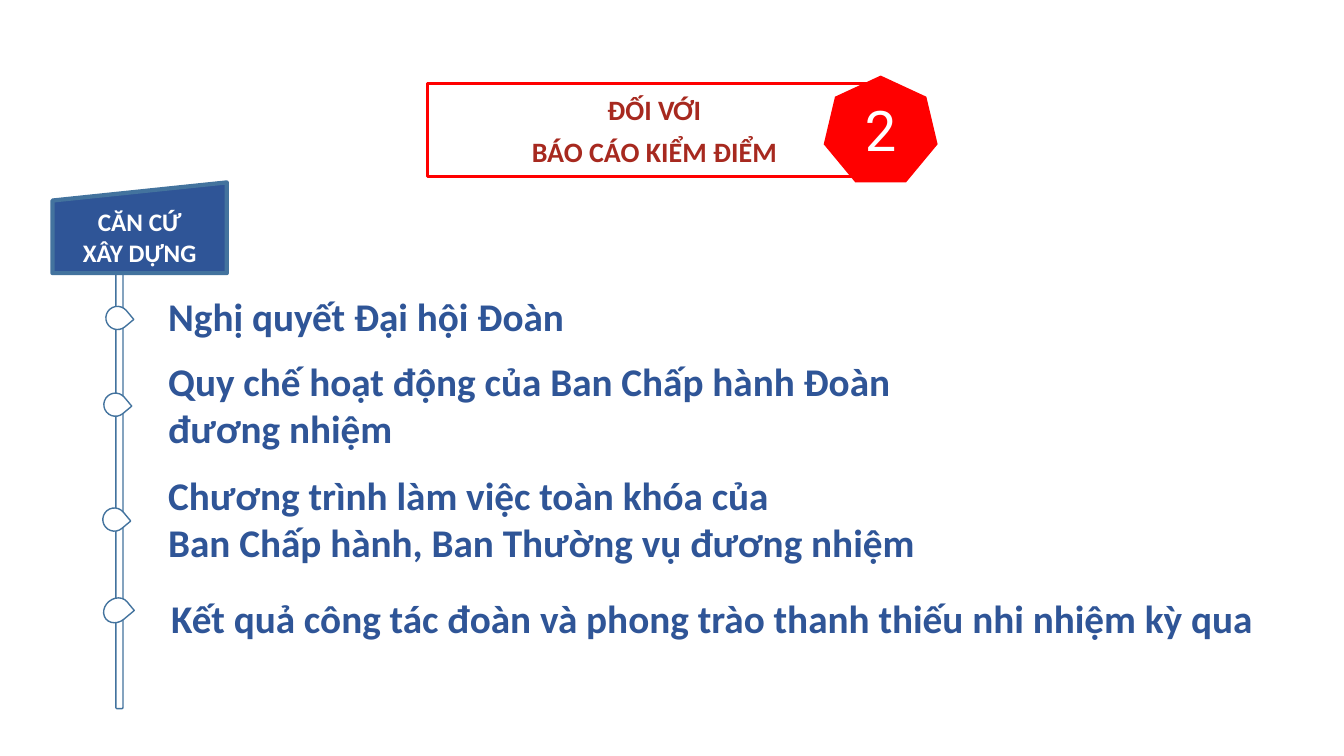
from pptx import Presentation
from pptx.dml.color import RGBColor
from pptx.enum.shapes import MSO_SHAPE as SHAPE
from pptx.enum.text import MSO_ANCHOR as ANCHOR, MSO_AUTO_SIZE as AUTO, PP_ALIGN as ALIGN
from pptx.util import Inches, Pt

BLUE, STEEL, RED, BRICK, WHITE = "2F5597", "43739E", "FF0000", "A7291F", "FFFFFF"


def rgb(color):
    return RGBColor.from_string(color)


def paint(sp, fill, line=None, width=1):
    sp.fill.solid()
    sp.fill.fore_color.rgb = rgb(fill)
    if line:
        sp.line.color.rgb = rgb(line)
        sp.line.width = Pt(width)
    else:
        sp.line.fill.background()


def add_shape(s, kind, box, fill, line=None, width=1, rotation=0):
    sp = s.shapes.add_shape(kind, *map(Inches, box))
    sp.shadow.inherit = False
    sp.rotation = rotation
    paint(sp, fill, line, width)
    return sp


def write(sp, text, size, color, font="Calibri", bold=True, align=ALIGN.CENTER,
          anchor=ANCHOR.MIDDLE, gap=0, auto_size=AUTO.NONE):
    """Write one paragraph per line; gap is the space between them."""
    tf = sp.text_frame
    tf.word_wrap = True
    tf.auto_size = auto_size
    tf.vertical_anchor = anchor
    for i, line in enumerate(text.split("\n")):
        p = tf.paragraphs[0] if i == 0 else tf.add_paragraph()
        p.alignment = align
        p.space_before = Pt(gap if i else 0)
        r = p.add_run()
        r.text = line
        r.font.name = font
        r.font.size = Pt(size)
        r.font.bold = bold
        r.font.color.rgb = rgb(color)


def title_banner(s, left, top, width, height):
    # Framed title
    title = s.shapes.title
    title.left, title.top, title.width, title.height = map(
        Inches, (left, top, width, height))
    paint(title, WHITE, RED, 2.25)
    write(title, "ĐỐI VỚI\nBÁO CÁO KIỂM ĐIỂM", 20, BRICK, gap=6)

    # Number badge over the right edge
    badge = add_shape(s, SHAPE.HEPTAGON,
                      (left + width - 0.57, top - 0.08, 1.13, 1.06), RED)
    write(badge, "2", 40, WHITE, font="Roboto", bold=False)


def signpost(s, left, top, width, height):
    # Post, then the sign standing on it
    sign_height = 0.9
    add_shape(s, SHAPE.ROUNDED_RECTANGLE,
              (left + 0.63, top + sign_height, 0.07, height - sign_height), WHITE, STEEL)
    sign = add_shape(s, SHAPE.FLOWCHART_MANUAL_INPUT,
                     (left, top, width, sign_height), BLUE, STEEL, 3)
    write(sign, "CĂN CỨ\nXÂY DỰNG", 18, WHITE)


def basis_item(s, text, box, drop):
    # Text of one basis and its drop-shaped marker on the post
    tb = s.shapes.add_textbox(*map(Inches, box))
    write(tb, text, 28, BLUE, align=ALIGN.LEFT, anchor=ANCHOR.TOP,
          auto_size=AUTO.SHAPE_TO_FIT_TEXT)
    left, top = box[:2]
    dx, dy, drop_height = drop
    add_shape(s, SHAPE.TEAR, (left + dx, top + dy, 0.23, drop_height),
              WHITE, STEEL, rotation=50.2)


def main():
    prs = Presentation()
    prs.slide_width, prs.slide_height = Inches(13.33), Inches(7.5)
    s = prs.slides.add_slide(prs.slide_layouts[5])

    title_banner(s, 4.24, 0.83, 4.5, 0.92)
    signpost(s, 0.52, 1.81, 1.73, 5.22)

    # Text, its box, marker offset and height
    items = [
        ("Nghị quyết Đại hội Đoàn",
         (1.57, 2.85, 5.16, 0.57), (-0.52, 0.19, 0.23)),
        ("Quy chế hoạt động của Ban Chấp hành Đoàn\nđương nhiệm",
         (1.57, 3.5, 9.53, 1.04), (-0.54, 0.4, 0.23)),
        ("Chương trình làm việc toàn khóa của\nBan Chấp hành, Ban Thường vụ đương nhiệm",
         (1.57, 4.63, 9.39, 1.04), (-0.55, 0.41, 0.23)),
        ("Kết quả công tác đoàn và phong trào thanh thiếu nhi nhiệm kỳ qua",
         (1.6, 5.85, 11, 0.57), (-0.56, 0.07, 0.27)),
    ]
    for text, box, drop in items:
        basis_item(s, text, box, drop)

    prs.save("out.pptx")


if __name__ == "__main__":
    main()
